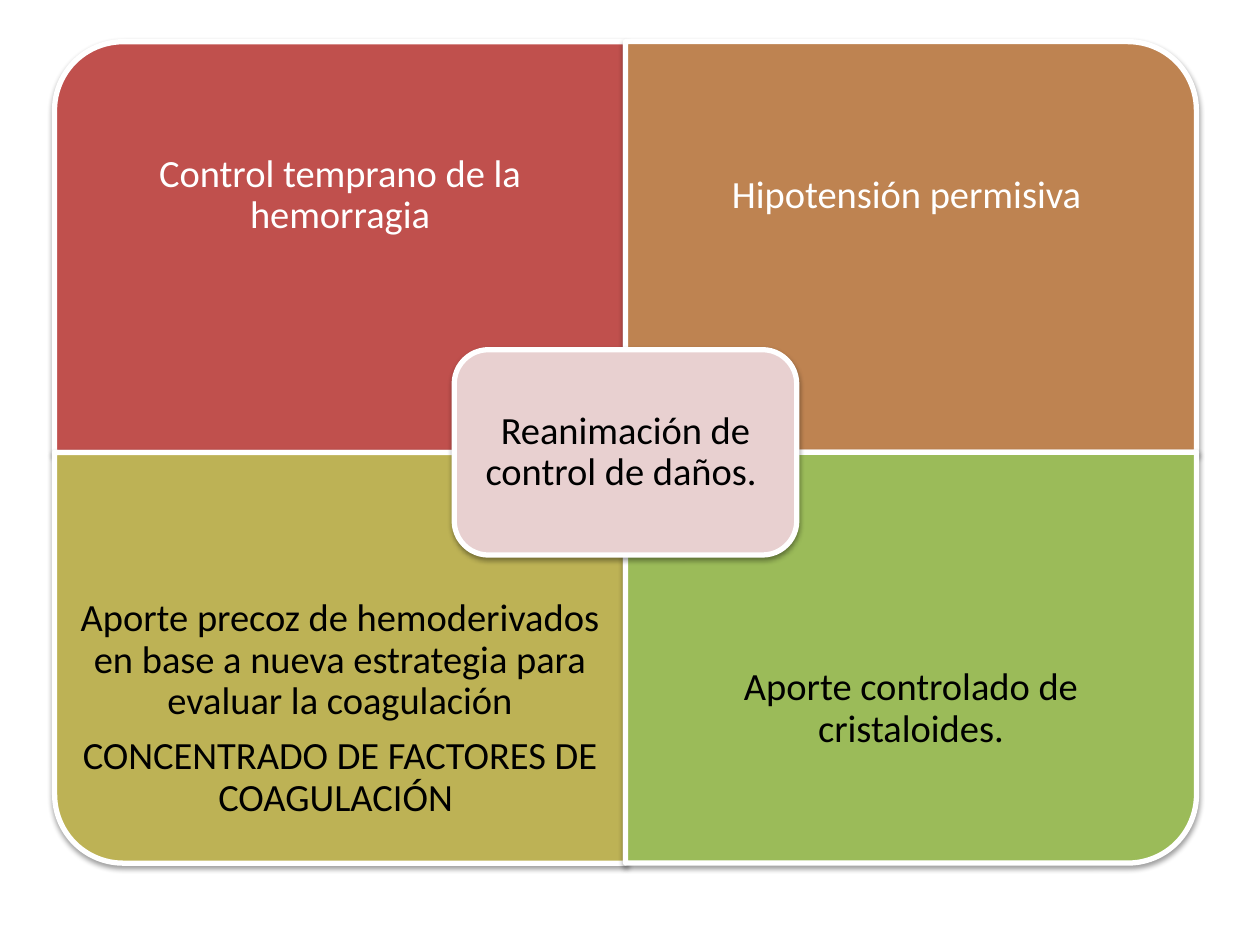
from lxml.etree import SubElement
from pptx import Presentation
from pptx.dml.color import RGBColor
from pptx.enum.shapes import MSO_SHAPE as Preset
from pptx.enum.text import MSO_ANCHOR as Anchor, PP_ALIGN as Align
from pptx.oxml.ns import qn
from pptx.util import Cm, Pt

WHITE = RGBColor(0xFF, 0xFF, 0xFF)
BLACK = RGBColor(0x00, 0x00, 0x00)
RED = RGBColor(0xC0, 0x50, 0x4D)
BROWN = RGBColor(0xBE, 0x83, 0x51)
OLIVE = RGBColor(0xBD, 0xB2, 0x55)
GREEN = RGBColor(0x9B, 0xBB, 0x59)
PINK = RGBColor(0xE8, 0xD0, 0xD0)

LEFT, TOP = 1.1, 0.84
QUARTER_WIDTH, QUARTER_HEIGHT = 11.51, 8.28
CENTER_X, CENTER_Y = LEFT + QUARTER_WIDTH, TOP + QUARTER_HEIGHT

# Column, row, rotation, fill, text colour, paragraphs
QUARTERS = [
    (0, 0, 270, RED, WHITE, ["Control temprano de la hemorragia"]),
    (1, 0, 0, BROWN, WHITE, ["Hipotensión permisiva "]),
    (0, 1, 180, OLIVE, BLACK, [
        "Aporte precoz de hemoderivados en base a nueva estrategia para "
        "evaluar la coagulación",
        "CONCENTRADO DE FACTORES DE COAGULACIÓN ",
    ]),
    (1, 1, 90, GREEN, BLACK, ["Aporte controlado de cristaloides."]),
]


class MatrixSlide:
    font_format = {"name": "Calibri", "size": Pt(22)}
    paragraph_format = {"alignment": Align.CENTER, "line_spacing": 0.9,
                        "space_before": Pt(0), "space_after": Pt(7.7)}

    def __init__(self, slide):
        self.slide = slide

    def panel(self, preset, center_x, center_y, width, height, fill, rotation=0):
        """Draw a white-edged panel; width and height are as seen after rotation."""
        if rotation % 180:
            width, height = height, width
        shape = self.slide.shapes.add_shape(
            preset, Cm(center_x - width / 2), Cm(center_y - height / 2),
            Cm(width), Cm(height))
        shape.rotation = rotation
        shape.fill.solid()
        shape.fill.fore_color.rgb = fill
        shape.line.color.rgb = WHITE
        shape.line.width = Pt(3)
        self.drop_shadow(shape)

    def drop_shadow(self, shape):
        shape.shadow.inherit = False
        effects = shape.element.spPr.find(qn("a:effectLst"))
        shadow = SubElement(effects, qn("a:outerShdw"), blurRad=str(Pt(3.1)),
                            dist=str(Pt(1.6)), dir="5400000", rotWithShape="0")
        color = SubElement(shadow, qn("a:srgbClr"), val=str(BLACK))
        SubElement(color, qn("a:alpha"), val="38000")

    def text(self, left, top, width, height, paragraphs, color, inset):
        box = self.slide.shapes.add_textbox(
            Cm(left), Cm(top), Cm(width), Cm(height))
        frame = box.text_frame
        frame_format = {"word_wrap": True, "vertical_anchor": Anchor.MIDDLE}
        for side in ("left", "top", "right", "bottom"):
            frame_format[f"margin_{side}"] = Cm(inset)
        self.apply(frame, frame_format)
        frame.text = "\n".join(paragraphs)
        for paragraph in frame.paragraphs:
            self.apply(paragraph, self.paragraph_format)
            for run in paragraph.runs:
                self.apply(run.font, self.font_format)
                run.font.color.rgb = color

    @staticmethod
    def apply(target, values):
        for name, value in values.items():
            setattr(target, name, value)


def main():
    presentation = Presentation()
    presentation.slide_width, presentation.slide_height = Cm(25.4), Cm(19.05)
    blank_layout = presentation.slide_layouts[6]
    matrix = MatrixSlide(presentation.slides.add_slide(blank_layout))

    text_height = QUARTER_HEIGHT * 0.75
    for column, row, rotation, fill, color, paragraphs in QUARTERS:
        left = LEFT + column * QUARTER_WIDTH
        top = TOP + row * QUARTER_HEIGHT
        matrix.panel(Preset.ROUND_1_RECTANGLE, left + QUARTER_WIDTH / 2,
                     top + QUARTER_HEIGHT / 2, QUARTER_WIDTH, QUARTER_HEIGHT,
                     fill, rotation)
        text_top = top + row * (QUARTER_HEIGHT - text_height)
        matrix.text(left, text_top, QUARTER_WIDTH, text_height,
                    paragraphs, color, inset=0.43)

    width, height, edge = QUARTER_WIDTH * 0.6, QUARTER_HEIGHT / 2, 0.2
    matrix.panel(Preset.ROUNDED_RECTANGLE, CENTER_X, CENTER_Y, width, height, PINK)
    matrix.text(CENTER_X - width / 2 + edge, CENTER_Y - height / 2 + edge,
                width - 2 * edge, height - 2 * edge,
                ["Reanimación de control de daños. "], BLACK, inset=0.23)

    presentation.save("out.pptx")


if __name__ == "__main__":
    main()
